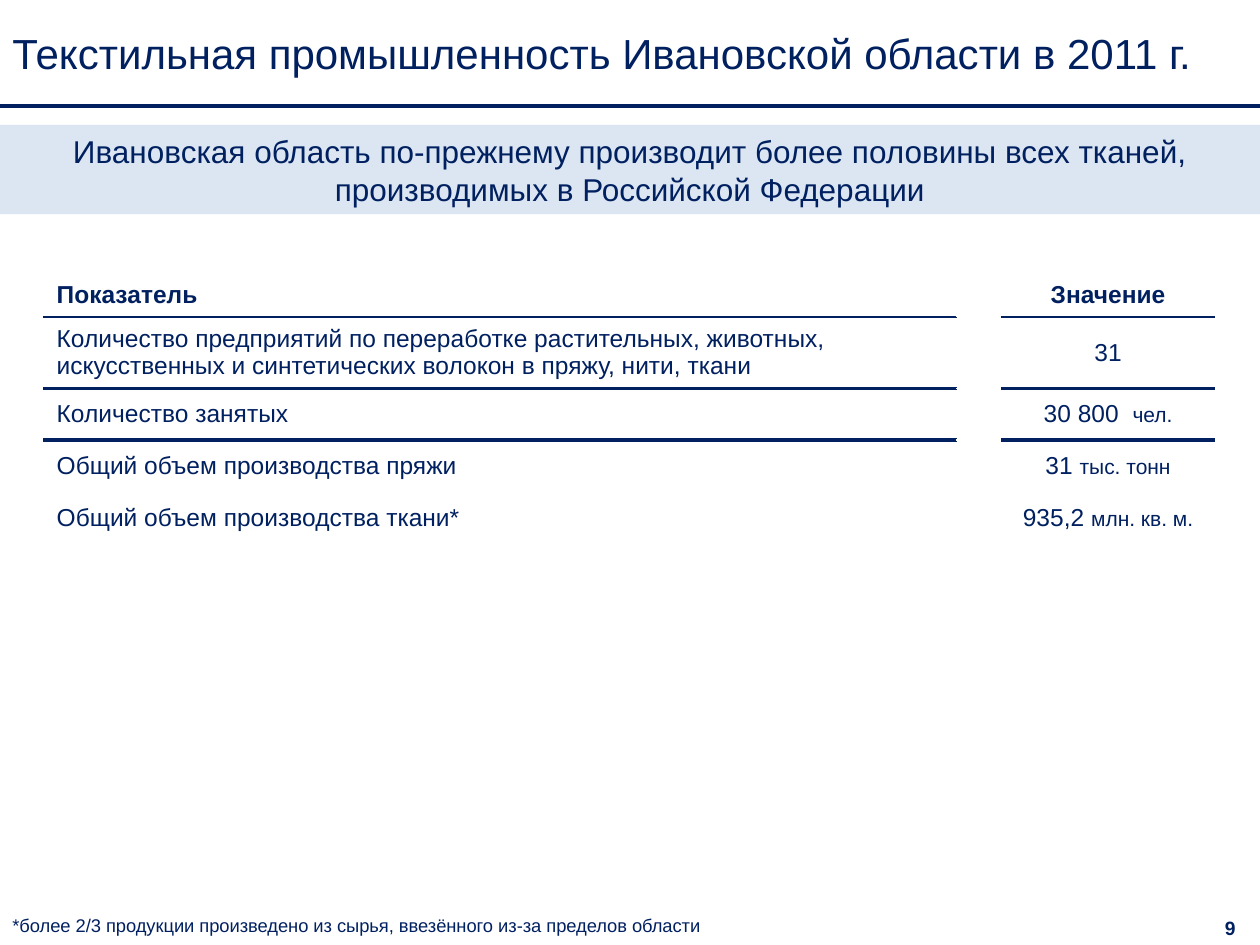
from lxml import etree
from pptx import Presentation
from pptx.dml.color import RGBColor
from pptx.enum.shapes import MSO_CONNECTOR, MSO_SHAPE
from pptx.enum.text import MSO_ANCHOR, PP_ALIGN
from pptx.oxml.ns import qn
from pptx.util import Inches, Pt

NAVY = RGBColor(0x00, 0x20, 0x60)
PALE_BLUE = RGBColor(0xDC, 0xE6, 0xF2)
LEFT, CENTER = PP_ALIGN.LEFT, PP_ALIGN.CENTER
TOP, MIDDLE = MSO_ANCHOR.TOP, MSO_ANCHOR.MIDDLE
RECTANGLE, STRAIGHT = MSO_SHAPE.RECTANGLE, MSO_CONNECTOR.STRAIGHT

FONT = "Arial"
COLUMNS = [7.24, 0.36, 1.69]
ROW_HEIGHTS = [0.33, 0.57, 0.41, 0.41, 0.41]
# Indicator, value, unit
ROWS = [
    ("Показатель", "Значение", ""),
    ("Количество предприятий по переработке растительных, животных, "
     "искусственных и синтетических волокон в пряжу, нити, ткани", "31", ""),
    ("Количество занятых", "30 800  ", "чел."),
    ("Общий объем производства пряжи", "31 ", "тыс. тонн"),
    ("Общий объем производства ткани*", "935,2 ", "млн. кв. м."),
]
# Width in points of the rule under a row
RULES = {0: 1.5, 1: 2.25}


class SlideBuilder:
    def __init__(self, page):
        self.page = page

    def add_runs(self, para, runs, align=LEFT, bold=False):
        """Add (text, size) runs to a paragraph."""
        para.alignment = align
        for text, size in runs:
            span = para.add_run()
            span.text = text
            span.font.name = FONT
            span.font.size = Pt(size)
            span.font.bold = bold
            span.font.color.rgb = NAVY

    def fill_frame(self, frame, text, size, anchor=TOP, **style):
        frame.word_wrap = True
        frame.vertical_anchor = anchor
        self.add_runs(frame.paragraphs[0], [(text, size)], **style)

    def text(self, place, text, size, **style):
        box = self.page.shapes.add_textbox(*map(Inches, place))
        self.fill_frame(box.text_frame, text, size, **style)

    def band(self, place, text, size):
        shape = self.page.shapes.add_shape(RECTANGLE, *map(Inches, place))
        shape.shadow.inherit = False
        shape.fill.solid()
        shape.fill.fore_color.rgb = PALE_BLUE
        shape.line.fill.background()
        self.fill_frame(shape.text_frame, text, size, MIDDLE, align=CENTER)

    def line(self, start, end, width):
        rule = self.page.shapes.add_connector(STRAIGHT, *map(Inches, start + end))
        rule.line.color.rgb = NAVY
        rule.line.width = Pt(width)
        etree.SubElement(rule._element.spPr, qn("a:effectLst"))

    def border(self, cell, side, width):
        edge = etree.Element(qn(f"a:{side}"), w=str(int(Pt(width))))
        fill = etree.SubElement(edge, qn("a:solidFill"))
        etree.SubElement(fill, qn("a:srgbClr"), val=str(NAVY))
        properties = cell._tc.get_or_add_tcPr()
        # Edges come before the fill; top is set before bottom
        position = len(properties.findall(qn("a:lnT")))
        properties.insert(position, edge)

    def table(self, left, top):
        frame = self.page.shapes.add_table(
            len(ROWS), len(COLUMNS), Inches(left), Inches(top),
            Inches(sum(COLUMNS)), Inches(sum(ROW_HEIGHTS)))
        table = frame.table
        table.first_row = table.horz_banding = False
        for column, width in zip(table.columns, COLUMNS):
            column.width = Inches(width)
        for index, (label, value, unit) in enumerate(ROWS):
            table.rows[index].height = Inches(ROW_HEIGHTS[index])
            header = index == 0
            name, gap, amount = (table.cell(index, c) for c in range(3))
            for cell in (name, gap, amount):
                cell.fill.background()
                cell.vertical_anchor = TOP if header else MIDDLE
            runs = [(value, 14)] + ([(unit, 12)] if unit else [])
            self.add_runs(name.text_frame.paragraphs[0], [(label, 14)], LEFT, header)
            self.add_runs(amount.text_frame.paragraphs[0], runs, CENTER, header)
            # A small end mark keeps the empty cell from stretching the row
            etree.SubElement(gap.text_frame.paragraphs[0]._p,
                             qn("a:endParaRPr"), sz="1000")
            for cell in (name, amount):
                if index - 1 in RULES:
                    self.border(cell, "lnT", RULES[index - 1])
                if index in RULES:
                    self.border(cell, "lnB", RULES[index])


def main():
    deck = Presentation()
    deck.slide_width, deck.slide_height = Inches(10), Inches(7.5)
    builder = SlideBuilder(deck.slides.add_slide(deck.slide_layouts[6]))

    # Title and rule
    builder.line((0, 0.84), (10, 0.84), 2)
    builder.text((0, 0, 10, 0.84),
                 "Текстильная промышленность Ивановской области в 2011 г.",
                 24, anchor=MIDDLE)

    # Indicators
    builder.table(0.35, 2.18)

    # Page number
    builder.text((9.53, 7.22, 0.47, 0.29), "9", 11, align=CENTER, bold=True)

    # Key message
    builder.band((0, 0.99, 10, 0.71),
                 "Ивановская область по-прежнему производит более половины "
                 "всех тканей, производимых в Российской Федерации", 18)

    # Footnote
    builder.text((0, 7.21, 10, 0.29),
                 "*более 2/3 продукции произведено из сырья, "
                 "ввезённого из-за пределов области", 10.5)

    deck.save("out.pptx")


if __name__ == "__main__":
    main()
